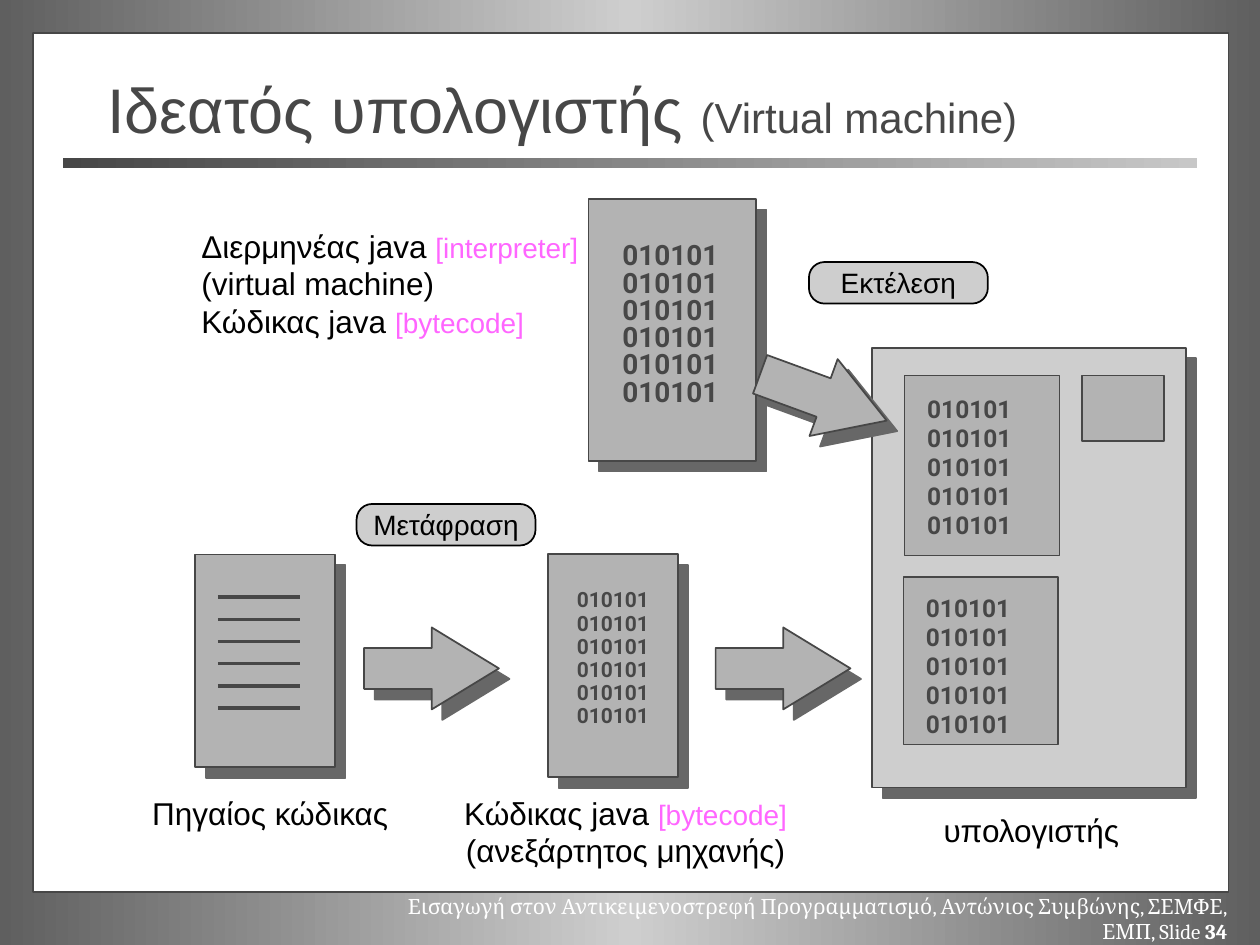
from copy import deepcopy

from lxml import etree
from pptx import Presentation
from pptx import util as u
from pptx.dml.color import RGBColor
from pptx.enum import shapes, text
from pptx.oxml.ns import qn

HUES = {
    "white": "FFFFFF", "black": "000000", "dark": "474747", "mid": "B3B3B3",
    "pale": "CECECE", "shade": "676767", "pink": "FF66FF",
    "edge": "5F5F5F", "fade": "C7C7C7",
}
KIND = shapes.MSO_SHAPE
ALIGN = text.PP_ALIGN


def hue(name):
    return RGBColor.from_string(HUES[name])


def blend(fill, root, names):
    """Fill with a left-to-right gradient of evenly spaced colours."""
    fill.gradient()
    fill.gradient_angle = 0
    stops = root.find(".//" + qn("a:gsLst"))
    while len(stops) < len(names):
        stops.append(deepcopy(stops[0]))
    for i, (stop, name) in enumerate(zip(fill.gradient_stops, names)):
        stop.color.rgb = hue(name)
        stop.position = i / (len(names) - 1)


def write(frame, paras, align=ALIGN.LEFT):
    """Each paragraph is a list of (words, size, colour, font, bold) runs."""
    for i, runs in enumerate(paras):
        para = frame.paragraphs[0] if i == 0 else frame.add_paragraph()
        para.alignment = align
        for words, size, color, face, bold in runs:
            run = para.add_run()
            run.text = words
            run.font.size = u.Pt(size)
            run.font.name = face
            run.font.bold = bold
            run.font.color.rgb = hue(color)


def plain(words, size=18, color="black"):
    return words, size, color, "Arial", False


def pink(words):
    return plain(words, 16, "pink")


def place(box):
    return [u.Inches(n) for n in box]


def label(pen, box, paras, align=ALIGN.LEFT, wrap=False):
    frame = pen.add_textbox(*place(box)).text_frame
    frame.word_wrap = wrap
    frame.auto_size = text.MSO_AUTO_SIZE.SHAPE_TO_FIT_TEXT
    write(frame, paras, align)


def block(pen, box, fill="mid", kind=KIND.RECTANGLE, line="dark", cast=False):
    """Add an outlined shape, with a hard drop shadow if cast is set."""
    shape = pen.add_shape(kind, *place(box))
    shape.shadow.inherit = False
    shape.fill.solid()
    shape.fill.fore_color.rgb = hue(fill)
    shape.line.color.rgb = hue(line)
    shape.line.width = u.Pt(1)
    if cast:
        effect = shape.element.spPr.find(qn("a:effectLst"))
        drop = etree.SubElement(
            effect, qn("a:outerShdw"), blurRad="0", dist=str(u.Pt(8.5)),
            dir=str(45 * 60000), algn="ctr", rotWithShape="0")
        etree.SubElement(drop, qn("a:srgbClr"), val=HUES["shade"])
    return shape


def arrow(pen, left, top, turn=0):
    shape = block(pen, (left, top, 1.07, 0.65), kind=KIND.RIGHT_ARROW, cast=True)
    shape.adjustments[1] = 0.82
    shape.rotation = turn


def badge(pen, left, top, words):
    shape = block(pen, (left, top, 1.42, 0.33), "pale",
                  KIND.ROUNDED_RECTANGLE, "black")
    shape.adjustments[0] = 0.375
    frame = shape.text_frame
    frame.word_wrap = False
    frame.vertical_anchor = text.MSO_ANCHOR.MIDDLE
    write(frame, [[plain(words, 16)]], ALIGN.CENTER)


def code(pen, box, step, count, size):
    """Stack rows of bits; box is the first row."""
    left, top, wide, high = box
    for i in range(count):
        label(pen, (left, top + i * step, wide, high),
              [[("010101", size, "dark", "Roboto", True)]])


def sheet(slide, box, *rows):
    """Group a shadowed page with its rows of bits."""
    pen = slide.shapes.add_group_shape().shapes
    block(pen, box, cast=True)
    code(pen, *rows)


def source(slide):
    pen = slide.shapes.add_group_shape().shapes
    block(pen, (1.55, 4.4, 1.11, 1.69), cast=True)
    for i in range(6):
        y = 4.74 + i * 0.176
        line = pen.add_connector(shapes.MSO_CONNECTOR.STRAIGHT,
                                 *place((1.73, y, 2.38, y)))
        line.line.color.rgb = hue("dark")
        line.line.width = u.Pt(2)
        etree.SubElement(line.element.spPr, qn("a:effectLst"))


def backdrop(slide):
    pen = slide.shapes
    blend(slide.background.fill, slide.element, ["edge", "pale", "edge"])
    block(pen, (0.26, 0.26, 9.49, 6.82), "white")
    note = ("Εισαγωγή στον Αντικειμενοστρεφή Προγραμματισμό, "
            "Αντώνιος Συμβώνης, ΣΕΜΦΕ, ΕΜΠ, Slide ")
    label(pen, (2.84, 7.04, 7, 0.3),
          [[(note, 12, "white", "Cambria", False),
            ("34", 12, "white", "Cambria", True)]], ALIGN.RIGHT, True)
    rule = block(pen, (0.5, 1.25, 9, 0.08))
    blend(rule.fill, rule.element, ["dark", "fade"])
    rule.line.fill.background()


def heading(slide):
    title = slide.shapes.title
    title.element.getparent().append(title.element)
    title.left, title.top, title.width, title.height = place((0.75, 0.55, 8.5, 0.62))
    frame = title.text_frame
    frame.auto_size = text.MSO_AUTO_SIZE.NONE
    frame.vertical_anchor = text.MSO_ANCHOR.MIDDLE
    write(frame, [[plain("Ιδεατός υπολογιστής ", 36, "dark"),
                   plain("(Virtual machine)", 24, "dark")]])


def main():
    deck = Presentation()
    deck.slide_width, deck.slide_height = u.Inches(10), u.Inches(7.5)
    slide = deck.slides.add_slide(deck.slide_layouts[5])
    pen = slide.shapes
    backdrop(slide)
    heading(slide)

    badge(pen, 2.83, 4, "Μετάφραση")
    source(slide)
    sheet(slide, (4.35, 4.4, 1.03, 1.77), (4.48, 4.61, 0.88, 0.3), 0.184, 6, 12)

    block(pen, (6.92, 2.76, 2.49, 3.49), "pale", cast=True)
    block(pen, (8.59, 2.98, 0.65, 0.52))
    for box, top in (((7.18, 2.98, 1.23, 1.43), 3.08),
                     ((7.17, 4.58, 1.23, 1.33), 4.66)):
        block(pen, box)
        row = (box[0] + 0.08, top, 0.99, 0.34)
        code(pen.add_group_shape().shapes, row, 0.229, 5, 14)

    label(pen, (1.11, 6.25, 2.07, 0.4), [[plain("Πηγαίος κώδικας")]], ALIGN.CENTER)
    label(pen, (3.58, 6.25, 2.77, 0.7),
          [[plain("Κώδικας java "), pink("[bytecode]")],
           [plain("(ανεξάρτητος μηχανής)")]], ALIGN.CENTER)
    label(pen, (7.39, 6.39, 1.6, 0.4), [[plain("υπολογιστής")]])

    for left in (2.89, 5.68):
        arrow(pen, left, 4.98)
    badge(pen, 6.42, 2.08, "Εκτέλεση")
    sheet(slide, (4.67, 1.58, 1.33, 2.08), (4.84, 1.84, 1.09, 0.37), 0.216, 6, 16)
    arrow(pen, 6, 2.83, 20.1)
    label(pen, (1.5, 1.75, 3.33, 1),
          [[plain("Διερμηνέας java "), pink("[interpreter]")],
           [plain("(virtual machine)")],
           [plain("Κώδικας java "), pink("[bytecode]")]], wrap=True)
    deck.save("out.pptx")


if __name__ == "__main__":
    main()
